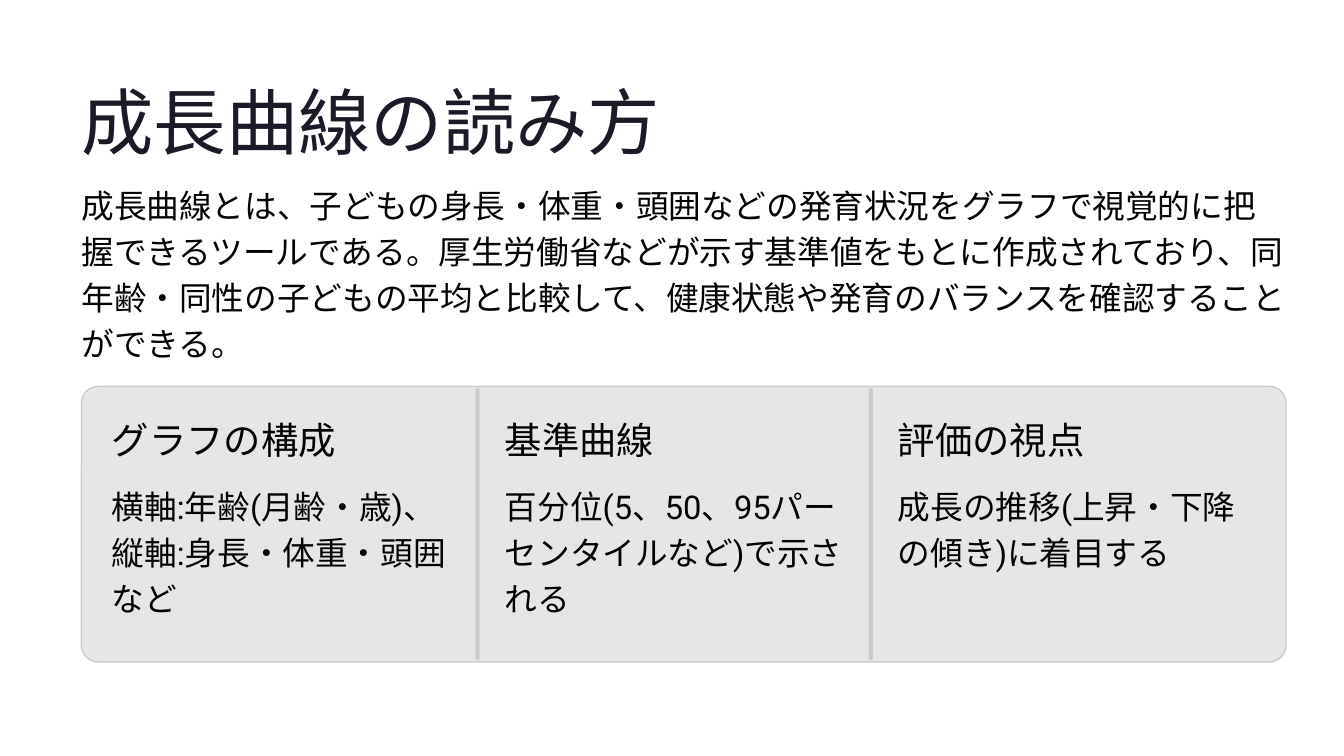
from pptx import Presentation
from pptx.dml.color import RGBColor
from pptx.enum import shapes, text
from pptx.util import Inches, Pt

NAVY = RGBColor(0x1B, 0x1B, 0x27)
BLACK = RGBColor(0x03, 0x03, 0x03)
PANEL_GRAY = RGBColor(0xE6, 0xE6, 0xE6)
RULE_GRAY = RGBColor(0xCC, 0xCC, 0xCC)

COLUMNS = [
    ("グラフの構成", "横軸:年齢(月齢・歳)、縦軸:身長・体重・頭囲など"),
    ("基準曲線", "百分位(5、50、95パーセンタイルなど)で示される"),
    ("評価の視点", "成長の推移(上昇・下降の傾き)に着目する"),
]
COLUMN_LEFT = 1.33
COLUMN_PITCH = 4.68

prs = Presentation()
prs.slide_width = Inches(16)
prs.slide_height = Inches(9)
slide = prs.slides.add_slide(prs.slide_layouts[1])


def write(box, place, words, font, size, color, spacing, wrap=True):
    """Place a text holder and fill it with one left-aligned run."""
    box.left, box.top, box.width, box.height = map(Inches, place)
    frame = box.text_frame
    frame.margin_left = frame.margin_top = frame.margin_right = frame.margin_bottom = 0
    frame.auto_size = text.MSO_AUTO_SIZE.NONE
    frame.word_wrap = wrap
    frame.vertical_anchor = text.MSO_ANCHOR.TOP
    paragraph = frame.paragraphs[0]
    paragraph.alignment = text.PP_ALIGN.LEFT
    paragraph.line_spacing = Pt(spacing)
    paragraph.space_before = Pt(0)
    run = paragraph.add_run()
    run.text = words
    run.font.name = font
    run.font.size = Pt(size)
    run.font.color.rgb = color
    return paragraph


def add_rounded(left, top, width, height, radius, fill):
    block = slide.shapes.add_shape(
        shapes.MSO_SHAPE.ROUNDED_RECTANGLE,
        Inches(left), Inches(top), Inches(width), Inches(height))
    block.adjustments[0] = radius
    block.shadow.inherit = False
    block.fill.solid()
    block.fill.fore_color.rgb = fill
    block.line.fill.background()
    return block


write(slide.shapes.title, (0.97, 0.87, 8.66, 1.08), "成長曲線の読み方",
      "Inter", 62, NAVY, 77.5, wrap=False)

definition = write(
    slide.placeholders[1], (0.97, 2.13, 14.34, 2.11),
    "成長曲線とは、子どもの身長・体重・頭囲などの発育状況をグラフで視覚的に把握できるツールである。"
    "厚生労働省などが示す基準値をもとに作成されており、同年齢・同性の子どもの平均と比較して、"
    "健康状態や発育のバランスを確認することができる。",
    "Roboto", 28, BLACK, 39.5)
properties = definition._p.get_or_add_pPr()
properties.set("marL", "0")
properties.set("indent", "0")
properties.append(properties.makeelement(
    "{http://schemas.openxmlformats.org/drawingml/2006/main}buNone", {}))

panel = add_rounded(0.97, 4.6, 14.34, 3.28, 0.06, PANEL_GRAY)
panel.line.color.rgb = RULE_GRAY
panel.line.width = Pt(1.2)

for index, (heading, detail) in enumerate(COLUMNS):
    left = COLUMN_LEFT + index * COLUMN_PITCH
    if index:
        add_rounded(left - 0.35, 4.62, 0.05, 3.24, 0.5, RULE_GRAY)
    write(slide.shapes.add_textbox(0, 0, 0, 0), (left, 4.96, 4.06, 0.69),
          heading, "Inter", 32, BLACK, 38.5, wrap=False)
    write(slide.shapes.add_textbox(0, 0, 0, 0), (left, 5.71, 4.06, 1.41),
          detail, "Roboto", 28, BLACK, 39.5)

prs.save("out.pptx")
